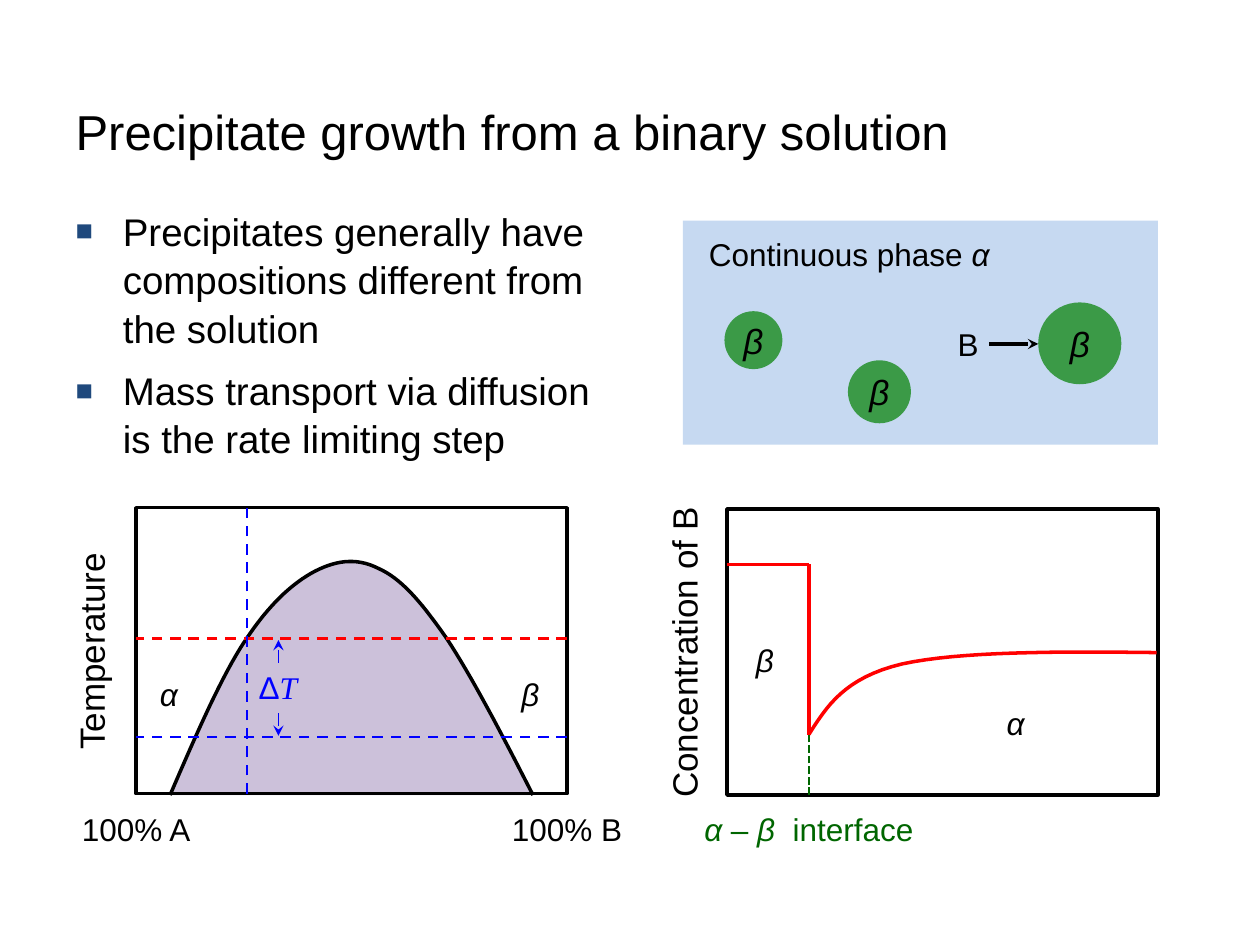
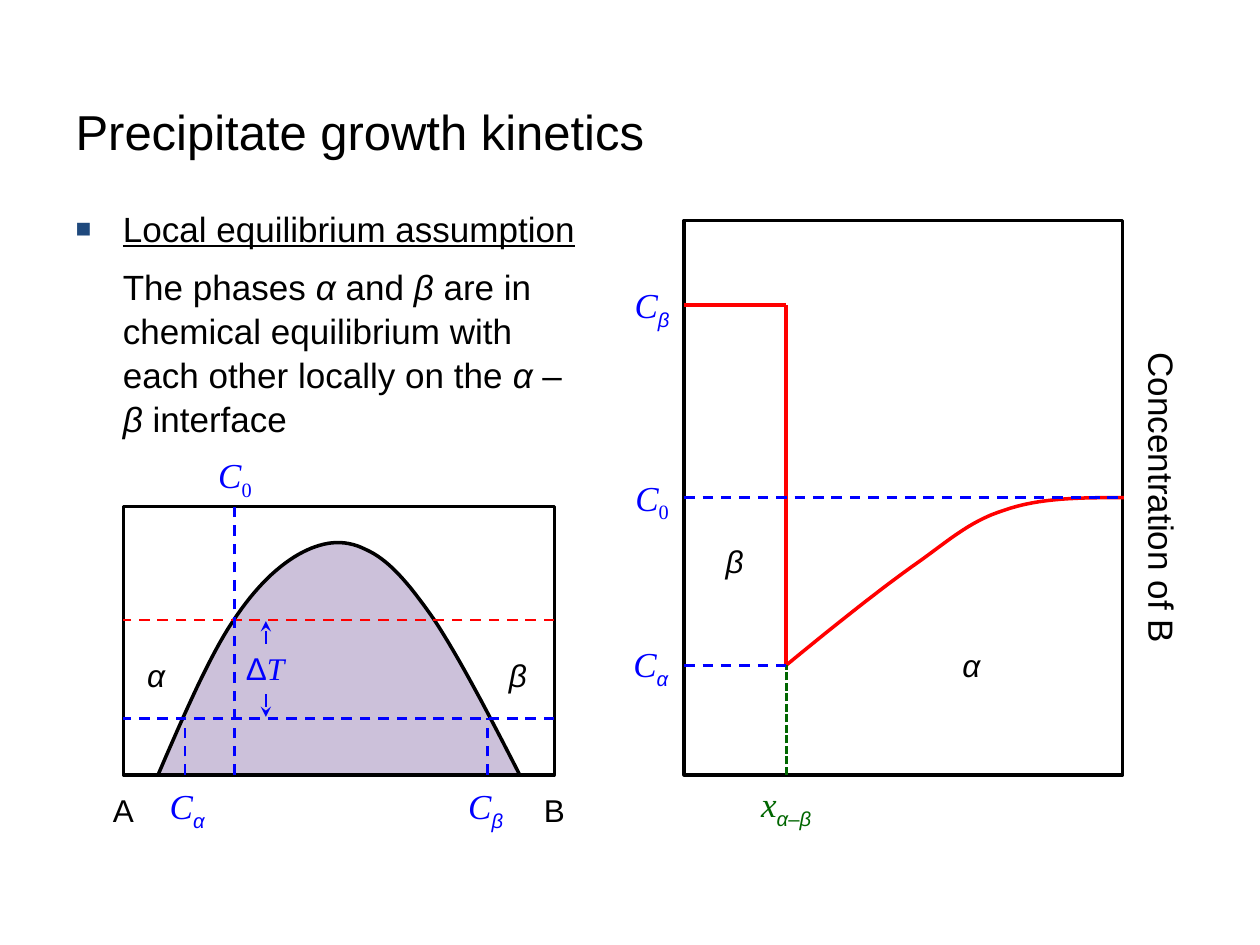
from dataclasses import dataclass
from typing import NamedTuple

from lxml.etree import SubElement
from pptx import Presentation
from pptx.dml.color import RGBColor
from pptx.enum.dml import MSO_LINE as Dash
from pptx.enum.shapes import MSO_CONNECTOR as Connector, MSO_SHAPE as Preset
from pptx.enum.text import MSO_ANCHOR as Anchor, MSO_AUTO_SIZE as AutoSize, PP_ALIGN as Align
from pptx.oxml.ns import qn
from pptx.util import Inches, Pt

COLUMNS, ROWS = 100, 75
WIDTH, HEIGHT = Inches(10), Inches(7.5)


@dataclass(frozen=True)
class Theme:
    black: str = "000000"
    red: str = "FF0000"
    blue: str = "0000FF"
    interface: str = "006600"
    precipitate: str = "008000"
    matrix: str = "C6D9F1"
    two_phase: str = "CCC1DA"
    bullet: str = "1F497D"
    sans: str = "Arial"
    serif: str = "Times New Roman"
    title_size: int = 28
    axis_size: int = 20
    label_size: int = 18
    heavy: float = 2
    medium: float = 1.5
    thin: float = 1


THEME = Theme()


class Point(NamedTuple):
    x: float
    y: float


class Box(NamedTuple):
    left: float
    top: float
    width: float
    height: float

    @property
    def right(self) -> float:
        return self.left + self.width

    @property
    def bottom(self) -> float:
        return self.top + self.height


class Run(NamedTuple):
    text: str
    italic: bool = False
    font: str = ""
    subscript: bool = False


class BodyItem(NamedTuple):
    runs: list[Run]
    bulleted: bool = True
    underlined: bool = False


@dataclass(frozen=True)
class Label:
    """Text centred on a point of the grid."""
    x: float
    y: float
    width: float
    runs: list[Run]
    size: int = THEME.label_size
    colour: str = THEME.black
    font: str = THEME.sans
    rotation: int = 0


@dataclass(frozen=True)
class Profile:
    """Concentration of B: plateau in beta, drop at the interface, rise in alpha."""
    frame: Box
    interface: float
    plateau: float
    depletion: float
    curve: list[Point]
    beta: Point
    alpha: Point
    axis: Point
    axis_rotation: int


ALPHA, BETA = Run("α", True), Run("β", True)
TITLE = Box(5, 5, 89.2, 10.8)
# Points right of and above the lower left corner of the phase diagram
DOME = [Point(2.7, -0.1), Point(4.6, 4.3), Point(6.5, 8.7), Point(8.3, 11.6),
        Point(10.2, 14.6), Point(12, 16.4), Point(13.9, 17.5),
        Point(15.7, 18.5), Point(17.4, 18.8), Point(19.2, 17.9),
        Point(21, 17.1), Point(22.5, 15.4), Point(24.6, 12.4),
        Point(26.6, 9.4), Point(29.1, 4.6), Point(31.5, -0.1)]
SOLVUS_HEIGHT, COOLED_HEIGHT, ALLOY = 12.3, 4.5, 8.8


def col(count: float) -> int:
    return round(WIDTH * count / COLUMNS)


def row(count: float) -> int:
    return round(HEIGHT * count / ROWS)


def emu(box: Box) -> tuple[int, int, int, int]:
    return col(box.left), row(box.top), col(box.width), row(box.height)


def rgb(colour: str) -> RGBColor:
    return RGBColor.from_string(colour)


def set_font(font, size: float, colour: str, name: str) -> None:
    font.size, font.name = Pt(size), name
    font.color.rgb = rgb(colour)


def add_runs(paragraph, runs: list[Run]) -> None:
    for part in runs:
        run = paragraph.add_run()
        run.text = part.text
        if part.italic:
            run.font.italic = True
        if part.font:
            run.font.name = part.font
        if part.subscript:
            run._r.get_or_add_rPr().set("baseline", "-25000")


def paint(shape, fill: str = "", line: str = "") -> None:
    shape.shadow.inherit = False
    if fill:
        shape.fill.solid()
        shape.fill.fore_color.rgb = rgb(fill)
    else:
        shape.fill.background()
    if line:
        shape.line.color.rgb = rgb(line)
        shape.line.width = Pt(THEME.heavy)
    else:
        shape.line.fill.background()


def add_rectangle(slide, box: Box, fill: str = "", line: str = "") -> None:
    paint(slide.shapes.add_shape(Preset.RECTANGLE, *emu(box)), fill, line)


def add_line(slide, start: Point, end: Point, colour: str,
             width: float = THEME.medium, dash=None, arrow: bool = False) -> None:
    line = slide.shapes.add_connector(
        Connector.STRAIGHT, col(start.x), row(start.y), col(end.x), row(end.y))
    line.line.color.rgb = rgb(colour)
    line.line.width = Pt(width)
    if dash:
        line.line.dash_style = dash
    if arrow:
        SubElement(line.line._get_or_add_ln(), qn("a:tailEnd"), type="stealth")
    SubElement(line._element.spPr, qn("a:effectLst"))


def add_curve(slide, points: list[Point], line: str, fill: str = "", steps: int = 16) -> None:
    """Draw chained cubic Bézier segments: a start, then three points for each."""
    traced = []
    for first in range(0, len(points) - 1, 3):
        a, b, c, d = points[first:first + 4]
        for step in range(1, steps + 1):
            t = step / steps
            weights = (1 - t) ** 3, 3 * t * (1 - t) ** 2, 3 * t * t * (1 - t), t ** 3
            x, y = (sum(w * p[axis] for w, p in zip(weights, (a, b, c, d))) for axis in (0, 1))
            traced.append((col(x), row(y)))
    builder = slide.shapes.build_freeform(col(points[0].x), row(points[0].y))
    builder.add_line_segments(traced, close=False)
    paint(builder.convert_to_shape(), fill, line)


def add_label(slide, label: Label) -> None:
    height = 4.4 if label.size == THEME.axis_size else 4
    box = Box(label.x - label.width / 2, label.y - height / 2, label.width, height)
    shape = slide.shapes.add_textbox(*emu(box))
    shape.rotation = label.rotation
    shape.text_frame.word_wrap = False
    shape.text_frame.auto_size = AutoSize.SHAPE_TO_FIT_TEXT
    paragraph = shape.text_frame.paragraphs[0]
    paragraph.alignment = Align.CENTER
    set_font(paragraph.font, label.size, label.colour, label.font)
    add_runs(paragraph, label.runs)


def symbol(x: float, y: float, name: str, subscript: Run,
           colour: str = THEME.blue, width: float = 6.9) -> Label:
    return Label(x, y, width, [Run(name, True), subscript], THEME.axis_size, colour, THEME.serif)


def greek_subscript(text: str, italic: bool = True) -> Run:
    return Run(text, italic, THEME.sans, True)


def add_precipitate(slide, box: Box) -> None:
    shape = slide.shapes.add_shape(Preset.OVAL, *emu(box))
    paint(shape, THEME.precipitate)
    colour = shape._element.spPr.find(qn("a:solidFill"))[0]
    SubElement(colour, qn("a:alpha"), val="70000")
    frame = shape.text_frame
    frame.margin_left = frame.margin_top = frame.margin_right = frame.margin_bottom = 0
    frame.vertical_anchor = Anchor.MIDDLE
    paragraph = frame.paragraphs[0]
    paragraph.alignment = Align.CENTER
    set_font(paragraph.font, THEME.axis_size, THEME.black, THEME.sans)
    add_runs(paragraph, [BETA])


def format_bullet(paragraph, bulleted: bool) -> None:
    properties = paragraph._p.get_or_add_pPr()
    properties.set("marL", str(col(3.75)))
    properties.set("indent", str(col(-3.75 if bulleted else 0)))
    if not bulleted:
        SubElement(properties, qn("a:buNone"))
        return
    colour = SubElement(properties, qn("a:buClr"))
    SubElement(colour, qn("a:srgbClr"), val=THEME.bullet)
    SubElement(properties, qn("a:buSzPct"), val="75000")
    SubElement(properties, qn("a:buFont"), typeface=THEME.sans)
    SubElement(properties, qn("a:buChar"), char="■")


def place(placeholder, box: Box) -> None:
    placeholder.left, placeholder.top, placeholder.width, placeholder.height = emu(box)
    placeholder.text_frame.auto_size = AutoSize.NONE


def add_slide(presentation, title: str, items: list[BodyItem], body_width: float, body_size: int):
    slide = presentation.slides.add_slide(presentation.slide_layouts[1])
    heading, body = slide.shapes.title, slide.placeholders[1]
    place(heading, TITLE)
    heading.text_frame.vertical_anchor = Anchor.MIDDLE
    paragraph = heading.text_frame.paragraphs[0]
    paragraph.alignment = Align.LEFT
    set_font(paragraph.font, THEME.title_size, THEME.black, THEME.sans)
    add_runs(paragraph, [Run(title)])
    place(body, Box(TITLE.left, TITLE.bottom, body_width, 52.5))
    for index, item in enumerate(items):
        paragraph = body.text_frame.add_paragraph() if index else body.text_frame.paragraphs[0]
        format_bullet(paragraph, item.bulleted)
        paragraph.line_spacing = 1.05
        paragraph.space_before = Pt(8 if index else 0)
        set_font(paragraph.font, body_size, THEME.black, THEME.sans)
        paragraph.font.underline = item.underlined
        add_runs(paragraph, item.runs)
    return slide


def add_phase_diagram(slide, frame: Box, ends: tuple[str, str], end_width: float) -> None:
    def at(x: float, height: float) -> Point:
        return Point(frame.left + x, frame.bottom - height)

    add_curve(slide, [at(*point) for point in DOME], THEME.black, THEME.two_phase)
    add_rectangle(slide, frame, line=THEME.black)
    for height, colour in ((SOLVUS_HEIGHT, THEME.red), (COOLED_HEIGHT, THEME.blue)):
        add_line(slide, at(frame.width, height), at(0, height), colour, dash=Dash.DASH)
    add_line(slide, at(ALLOY, 0), at(ALLOY, frame.height), THEME.blue, dash=Dash.DASH)
    for start, end in ((6.4, 4.6), (10.4, 12.2)):
        add_line(slide, at(11.3, start), at(11.3, end), THEME.blue, THEME.thin, arrow=True)
    add_label(slide, Label(*at(11.25, 8.5), 5.1, [Run("Δ"), Run("T", True, THEME.serif)],
                           colour=THEME.blue))
    add_label(slide, Label(*at(2.6, 7.9), 3.6, [ALPHA]))
    add_label(slide, Label(*at(31.3, 7.9), 3.4, [BETA]))
    for x, text in zip((0, frame.width), ends):
        add_label(slide, Label(*at(x, -2.8), end_width, [Run(text)]))


def add_profile(slide, profile: Profile) -> None:
    frame, x = profile.frame, profile.interface
    corner, bottom = Point(x, profile.plateau), Point(x, profile.depletion)
    add_rectangle(slide, frame, line=THEME.black)
    add_line(slide, Point(frame.left, profile.plateau), corner, THEME.red, THEME.heavy)
    add_line(slide, bottom, corner, THEME.red, THEME.heavy)
    add_curve(slide, [bottom, *profile.curve], THEME.red)
    add_line(slide, Point(x, frame.bottom), bottom, THEME.interface, dash=Dash.SQUARE_DOT)
    add_label(slide, Label(*profile.beta, 3.4, [BETA]))
    add_label(slide, Label(*profile.alpha, 3.6, [ALPHA]))
    add_label(slide, Label(*profile.axis, 25.2, [Run("Concentration of B")],
                           THEME.axis_size, rotation=profile.axis_rotation))


def build_growth_slide(presentation) -> None:
    slide = add_slide(presentation, "Precipitate growth from a binary solution", [
        BodyItem([Run("Precipitates generally have compositions different from the solution")]),
        BodyItem([Run("Mass transport via diffusion is the rate limiting step")]),
    ], 44.2, 22)
    add_phase_diagram(slide, Box(10.8, 40.3, 34.2, 22.7), ("100% A", "100% B"), 10.8)
    add_label(slide, Label(7.25, 51.7, 17.7, [Run("Temperature")], THEME.axis_size, rotation=270))
    add_rectangle(slide, Box(54.2, 17.5, 37.7, 17.8), THEME.matrix)
    for box in (Box(82.4, 24, 6.6, 6.5), Box(57.5, 24.7, 4.6, 4.6), Box(67.3, 28.6, 5, 5)):
        add_precipitate(slide, box)
    add_label(slide, Label(67.4, 20.2, 25.2, [Run("Continuous phase "), ALPHA]))
    add_label(slide, Label(76.85, 27.3, 3.7, [Run("B")]))
    add_line(slide, Point(78.5, 27.3), Point(82.4, 27.3), THEME.black, THEME.heavy, arrow=True)
    add_profile(slide, Profile(
        Box(57.7, 40.4, 34.2, 22.7), 64.2, 44.8, 58.3,
        [Point(65.6, 56.1), Point(67, 53.8), Point(71.6, 52.7),
         Point(76.2, 51.7), Point(84, 51.7), Point(91.8, 51.8)],
        beta=Point(60.7, 52.4), alpha=Point(80.6, 57.4),
        axis=Point(54.3, 51.8), axis_rotation=270))
    add_label(slide, Label(64.2, 65.8, 19.4, [ALPHA, Run(" – "), BETA, Run("  interface")],
                           colour=THEME.interface))


def build_kinetics_slide(presentation) -> None:
    slide = add_slide(presentation, "Precipitate growth kinetics", [
        BodyItem([Run("Local equilibrium assumption")], underlined=True),
        BodyItem([Run("The phases "), ALPHA, Run(" and "), BETA,
                  Run(" are in chemical equilibrium with each other locally on the "),
                  ALPHA, Run(" – "), BETA, Run(" interface")], bulleted=False),
    ], 42.5, 20)
    diagram = Box(9.8, 40.2, 34.2, 21.3)
    add_phase_diagram(slide, diagram, ("A", "B"), 3.7)
    for x in (14.7, 38.7):
        add_line(slide, Point(x, diagram.bottom), Point(x, diagram.bottom - COOLED_HEIGHT),
                 THEME.blue, dash=Dash.DASH)
    profile = Profile(
        Box(54.3, 17.5, 34.8, 44), 62.4, 24.2, 52.8,
        [Point(65.8, 50), Point(69.3, 47.2), Point(72.2, 45.1),
         Point(75.1, 43.1), Point(76.8, 41.4), Point(79.7, 40.5),
         Point(82.5, 39.5), Point(85.8, 39.5), Point(89.2, 39.5)],
        beta=Point(58.3, 44.5), alpha=Point(77.1, 52.8),
        axis=Point(92.2, 39.5), axis_rotation=90)
    add_profile(slide, profile)
    frame = profile.frame
    for y, right in ((39.5, frame.right), (profile.depletion, profile.interface)):
        add_line(slide, Point(frame.left, y), Point(right, y), THEME.blue, dash=Dash.DASH)
    initial = Run("0", subscript=True)
    in_alpha, in_beta = greek_subscript("α"), greek_subscript("β")
    for x, y, subscript in ((18.65, 37.7, initial), (14.85, 64, in_alpha), (38.55, 64, in_beta),
                            (51.75, 39.5, initial), (51.65, 52.7, in_alpha), (51.75, 24.2, in_beta)):
        add_label(slide, symbol(x, y, "C", subscript))
    add_label(slide, Label(62.4, 63.8, 9.6, [Run("x", True), in_alpha, greek_subscript("–", False),
                                             in_beta], THEME.axis_size, THEME.interface, THEME.serif))


def main() -> None:
    presentation = Presentation()
    presentation.slide_width, presentation.slide_height = WIDTH, HEIGHT
    build_growth_slide(presentation)
    build_kinetics_slide(presentation)
    presentation.save("out.pptx")


if __name__ == "__main__":
    main()
